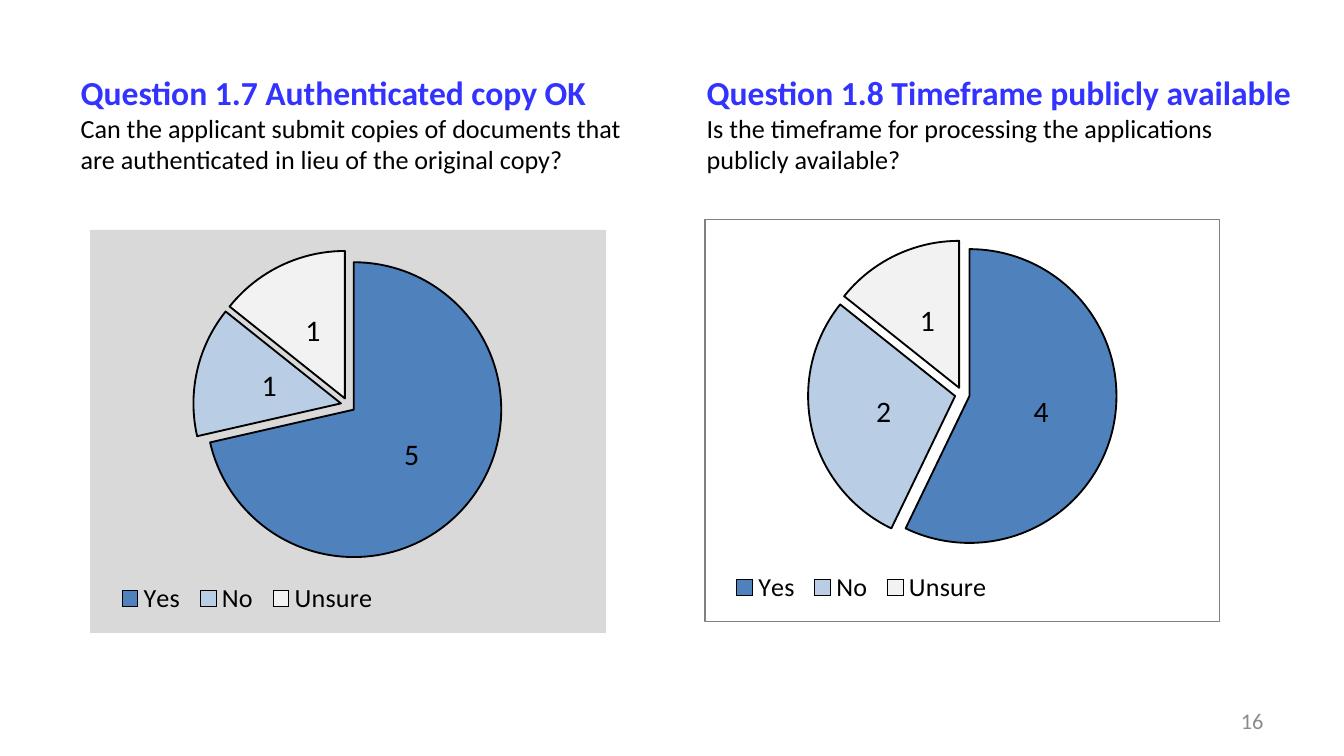
from dataclasses import dataclass

from pptx import Presentation
from pptx.chart.data import CategoryChartData
from pptx.dml.color import RGBColor
from pptx.enum.chart import XL_CHART_TYPE, XL_LABEL_POSITION, XL_LEGEND_POSITION
from pptx.enum.text import MSO_ANCHOR, MSO_AUTO_SIZE, PP_ALIGN
from pptx.oxml import parse_xml
from pptx.oxml.ns import nsdecls, qn
from pptx.util import Inches, Pt

PIE = XL_CHART_TYPE.PIE
CENTER = XL_LABEL_POSITION.CENTER
BOTTOM = XL_LEGEND_POSITION.BOTTOM
MIDDLE = MSO_ANCHOR.MIDDLE
NO_FIT = MSO_AUTO_SIZE.NONE
LEFT, RIGHT = PP_ALIGN.LEFT, PP_ALIGN.RIGHT
TITLE_ONLY = 5


@dataclass
class Theme:
    face: str = "Calibri"
    heading: str = "3333FF"
    ink: str = "000000"
    muted: str = "8C8C8C"
    panel: str = "D9D9D9"
    frame: str = "808080"
    slices: tuple = ("4F81BD", "B9CDE5", "F2F2F2")
    heading_size: int = 18
    body_size: int = 14
    label_size: int = 16
    chart_size: int = 10
    number_size: int = 12
    explosion: int = 5


class SurveyPage:
    """Holds the theme and the current slide."""

    def __init__(self, page, theme):
        self.page = page
        self.theme = theme

    def style(self, font, size, color, bold=False):
        values = {"name": self.theme.face, "size": Pt(size), "bold": bold}
        for name, value in values.items():
            setattr(font, name, value)
        font.color.rgb = RGBColor.from_string(color)

    def span(self, para, text, size, color, bold=False):
        span = para.add_run()
        span.text = text
        self.style(span.font, size, color, bold)

    def place(self, box, area, align=LEFT):
        """Position a text box and return its first paragraph."""
        for name, value in zip(("left", "top", "width", "height"), area):
            setattr(box, name, Inches(value))
        frame = box.text_frame
        values = {"word_wrap": True, "auto_size": NO_FIT, "vertical_anchor": MIDDLE}
        for name, value in values.items():
            setattr(frame, name, value)
        para = frame.paragraphs[0]
        para.alignment = align
        return para

    def text_box(self):
        return self.page.shapes.add_textbox(0, 0, 0, 0)

    def question(self, box, area, heading, body):
        theme = self.theme
        para = self.place(box, area)
        self.span(para, heading, theme.heading_size, theme.heading, True)
        if box.is_placeholder:
            para.add_line_break()
        else:
            para = box.text_frame.add_paragraph()
            para.alignment = LEFT
        self.span(para, body, theme.body_size, theme.ink)

    def page_number(self, area, number):
        para = self.place(self.text_box(), area, RIGHT)
        self.span(para, number, self.theme.number_size, self.theme.muted)

    def outline(self, look):
        look.line.color.rgb = RGBColor.from_string(self.theme.ink)
        look.line.width = Pt(1)

    def explosion(self):
        return parse_xml(
            f'<c:explosion {nsdecls("c")} val="{self.theme.explosion}"/>')

    def layout(self, position, target=""):
        """Make a layout at fractions of the chart area."""
        modes = '<c:xMode val="edge"/><c:yMode val="edge"/>'
        sizes = "".join(f'<c:{k} val="{v}"/>' for k, v in zip("xywh", position))
        return parse_xml(
            f'<c:layout {nsdecls("c")}><c:manualLayout>{target}{modes}{sizes}'
            "</c:manualLayout></c:layout>")

    def chart_area(self, chart, fill, border):
        paint = '<a:solidFill><a:srgbClr val="{}"/></a:solidFill>'
        inside = paint.format(fill) if fill else "<a:noFill/>"
        edge = paint.format(border) if border else "<a:noFill/>"
        chart.element.find(qn("c:chart")).addnext(parse_xml(
            f'<c:spPr {nsdecls("c", "a")}>{inside}'
            f'<a:ln w="{Pt(0.75)}">{edge}</a:ln></c:spPr>'))

    def pie(self, area, categories, values, fill=None, border=None):
        theme = self.theme
        data = CategoryChartData()
        data.categories = categories
        data.add_series("Series 1", values)
        chart = self.page.shapes.add_chart(PIE, *map(Inches, area), data).chart
        chart.has_title = False
        self.style(chart.font, theme.chart_size, theme.ink)
        self.chart_area(chart, fill, border)

        # Slices, pulled apart a little
        plot = chart.plots[0]
        plot.vary_by_categories = True
        series = plot.series[0]
        self.outline(series.format)
        for index, color in enumerate(theme.slices):
            look = series.points[index].format
            look.fill.solid()
            look.fill.fore_color.rgb = RGBColor.from_string(color)
            self.outline(look)
        series_part = chart.element.find(".//" + qn("c:ser"))
        series_part.find(qn("c:spPr")).addnext(self.explosion())
        for point_part in series_part.findall(qn("c:dPt")):
            point_part.find(qn("c:spPr")).addprevious(self.explosion())

        # Value labels
        labels = series.data_labels
        label_values = {"show_value": True, "show_percentage": False,
                        "show_category_name": False, "position": CENTER}
        for name, value in label_values.items():
            setattr(labels, name, value)
        self.style(labels.font, theme.label_size, theme.ink)

        # Legend at lower left, pie above it
        chart.has_legend = True
        legend = chart.legend
        legend.position = BOTTOM
        legend.include_in_layout = False
        self.style(legend.font, theme.body_size, theme.ink)
        legend_part = chart.element.find(".//" + qn("c:legend"))
        plot_part = chart.element.find(".//" + qn("c:plotArea"))
        for part in (legend_part, plot_part):
            for old in part.findall(qn("c:layout")):
                part.remove(old)
        legend_part.find(qn("c:legendPos")).addnext(
            self.layout((0.04, 0.87, 0.53, 0.09)))
        plot_part.insert(0, self.layout(
            (0.2, 0.05, 0.6, 0.77), '<c:layoutTarget val="inner"/>'))


def main():
    deck = Presentation()
    deck.slide_width = Inches(10)
    deck.slide_height = deck.slide_width * 9 // 16
    page = deck.slides.add_slide(deck.slide_layouts[TITLE_ONLY])
    theme = Theme()
    survey = SurveyPage(page, theme)

    # Questions
    survey.question(
        page.shapes.title, (0.5, 0.21, 4.5, 1.42),
        "Question 1.7 Authenticated copy OK",
        "Can the applicant submit copies of documents that are authenticated "
        "in lieu of the original copy?")
    survey.question(
        survey.text_box(), (5.16, 0.45, 4.57, 0.94),
        "Question 1.8 Timeframe publicly available",
        "Is the timeframe for processing the applications publicly available?")

    # Page number
    survey.page_number((7.17, 5.21, 2.33, 0.3), "16")

    # Answers
    answers = ("Yes", "No", "Unsure")
    survey.pie((0.67, 1.71, 3.84, 3), answers, (5, 1, 1), fill=theme.panel)
    survey.pie((5.24, 1.63, 3.84, 3), answers, (4, 2, 1), border=theme.frame)

    deck.save("out.pptx")


if __name__ == "__main__":
    main()
